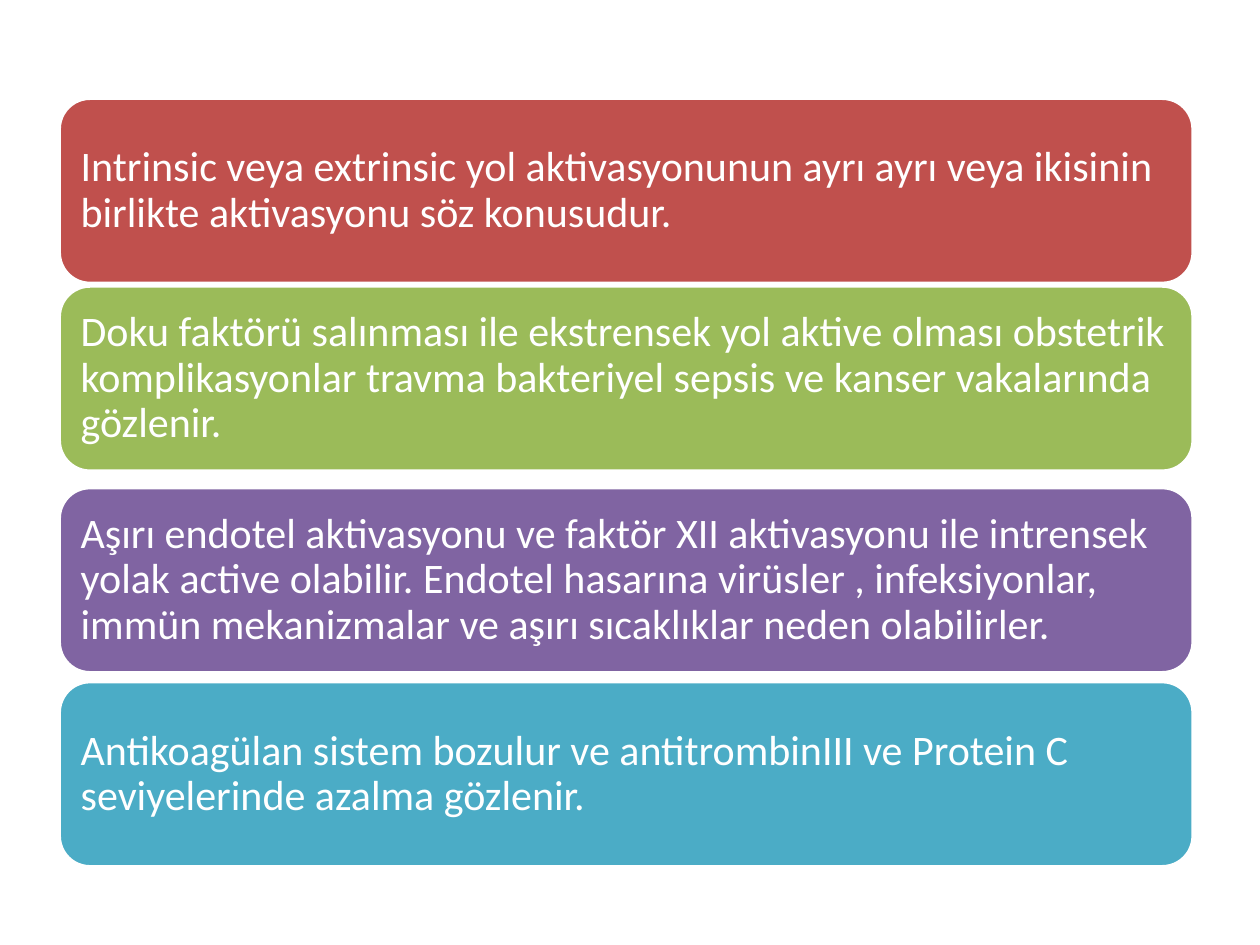
from dataclasses import dataclass

from pptx import Presentation
from pptx import util as u
from pptx.dml.color import RGBColor
from pptx.enum import shapes, text

WHITE = RGBColor(0xFF, 0xFF, 0xFF)
RED = RGBColor(0xC0, 0x50, 0x4D)
GREEN = RGBColor(0x9B, 0xBB, 0x59)
PURPLE = RGBColor(0x80, 0x64, 0xA2)
BLUE = RGBColor(0x4B, 0xAC, 0xC6)

SLIDE_WIDTH, SLIDE_HEIGHT = u.Inches(10), u.Inches(7.5)
CARD_LEFT = u.Inches(0.47)
CARD_WIDTH = int(SLIDE_WIDTH * 0.9)
CARD_HEIGHT = u.Inches(1.47)
CARD_INSET = u.Inches(0.1)


@dataclass(frozen=True)
class Card:
    top: float  # inches; the gaps between cards are uneven
    color: RGBColor
    wording: str


CARDS = [
    Card(0.78, RED,
         "Intrinsic veya extrinsic yol aktivasyonunun ayrı ayrı veya ikisinin "
         "birlikte aktivasyonu söz konusudur."),
    Card(2.27, GREEN,
         "Doku faktörü salınması ile ekstrensek yol aktive olması obstetrik "
         "komplikasyonlar travma bakteriyel sepsis ve kanser vakalarında gözlenir."),
    Card(3.87, PURPLE,
         "Aşırı endotel aktivasyonu ve faktör XII aktivasyonu ile intrensek yolak "
         "active olabilir. Endotel hasarına virüsler , infeksiyonlar, immün "
         "mekanizmalar ve aşırı sıcaklıklar neden olabilirler."),
    Card(5.41, BLUE,
         "Antikoagülan sistem bozulur ve antitrombinIII ve Protein C "
         "seviyelerinde azalma gözlenir."),
]


def draw_card(slide, card: Card) -> None:
    shape = slide.shapes.add_shape(
        shapes.MSO_SHAPE.ROUNDED_RECTANGLE,
        CARD_LEFT, u.Inches(card.top), CARD_WIDTH, CARD_HEIGHT)
    shape.shadow.inherit = False
    shape.fill.solid()
    shape.fill.fore_color.rgb = card.color
    shape.line.color.rgb = WHITE
    shape.line.width = u.Pt(2)

    frame = shape.text_frame
    frame.text = card.wording
    frame.word_wrap = True
    frame.vertical_anchor = text.MSO_ANCHOR.MIDDLE
    frame.margin_left = frame.margin_right = CARD_INSET
    frame.margin_top = frame.margin_bottom = CARD_INSET
    paragraph = frame.paragraphs[0]
    paragraph.alignment = text.PP_ALIGN.LEFT
    paragraph.line_spacing = 0.9
    font = paragraph.runs[0].font
    font.name = "Calibri"
    font.size = u.Pt(24)
    font.color.rgb = WHITE


def main() -> None:
    presentation = Presentation()
    presentation.slide_width = SLIDE_WIDTH
    presentation.slide_height = SLIDE_HEIGHT
    blank_layout = presentation.slide_layouts.get_by_name("Blank")
    slide = presentation.slides.add_slide(blank_layout)
    for card in CARDS:
        draw_card(slide, card)
    presentation.save("out.pptx")


if __name__ == "__main__":
    main()
